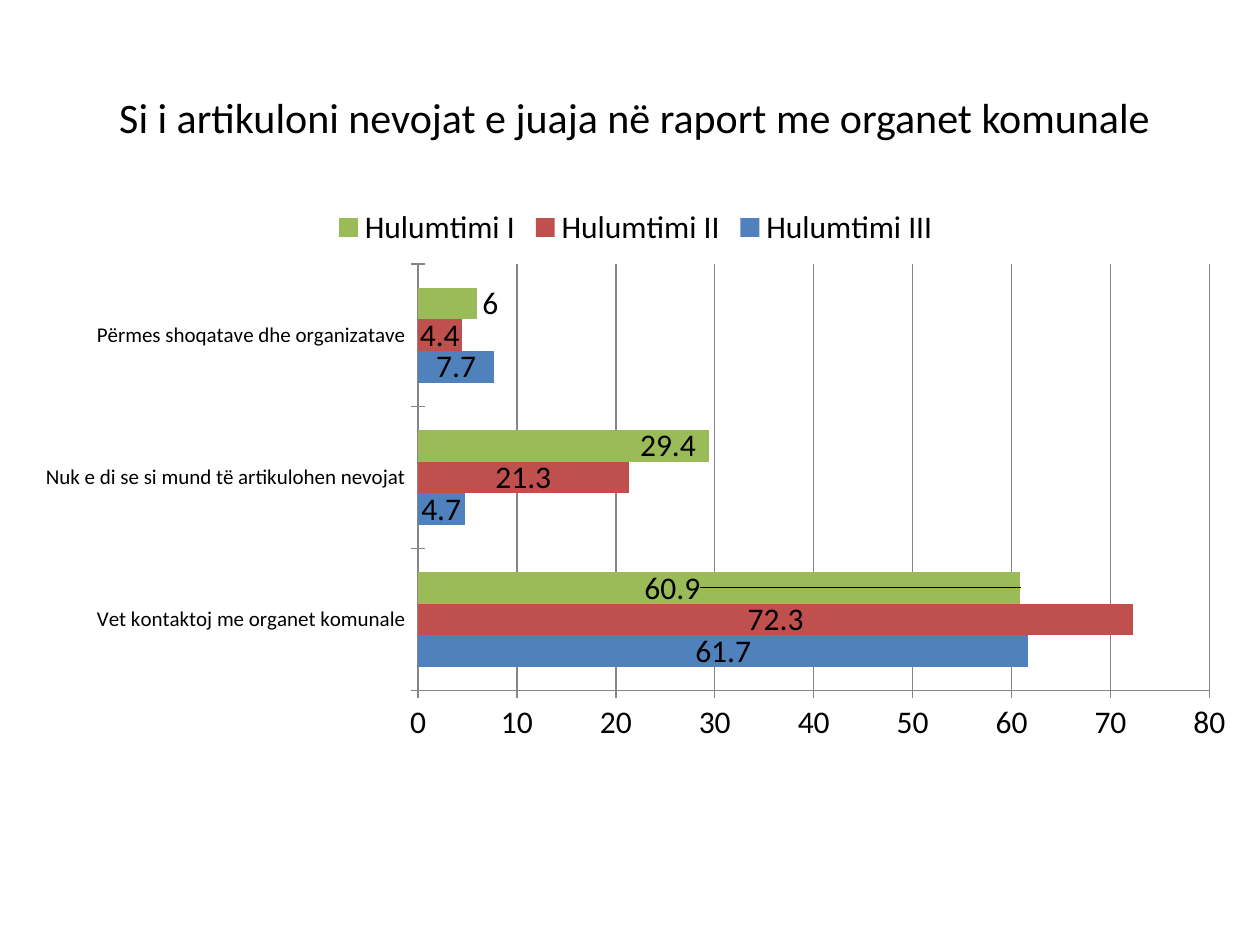
"""Build a survey slide with a title and a clustered bar chart."""
from lxml import etree
from pptx import Presentation
from pptx.chart.data import CategoryChartData
from pptx.dml.color import RGBColor
from pptx.enum.chart import XL_CHART_TYPE, XL_LABEL_POSITION, XL_LEGEND_POSITION, XL_TICK_MARK
from pptx.enum.text import MSO_ANCHOR, PP_ALIGN
from pptx.oxml.ns import qn
from pptx.util import Cm, Pt

BAR = XL_CHART_TYPE.BAR_CLUSTERED
CENTER, OUTSIDE = XL_LABEL_POSITION.CENTER, XL_LABEL_POSITION.OUTSIDE_END
TOP = XL_LEGEND_POSITION.TOP
CROSS, NO_TICK = XL_TICK_MARK.CROSS, XL_TICK_MARK.NONE
MIDDLE, ALIGN_CENTER = MSO_ANCHOR.MIDDLE, PP_ALIGN.CENTER

FONT = "Calibri"
COLORS = {"text": "000000", "line": "868686", "blue": "4F81BD", "red": "C0504D", "green": "9BBB59"}
TITLE = " Si i artikuloni nevojat e juaja në raport me organet komunale"
CATEGORIES = [
    "Vet kontaktoj me organet komunale",
    "Nuk e di se si mund të artikulohen nevojat",
    "Përmes shoqatave dhe organizatave",
]
SERIES = [
    ("Hulumtimi III", (61.7, 4.7, 7.7), "blue", CENTER),
    ("Hulumtimi II", (72.3, 21.3, 4.4), "red", CENTER),
    ("Hulumtimi I", (60.9, 29.4, 6), "green", OUTSIDE),
]
LABEL_SHIFTS = {0: -0.31, 1: -0.06}


def rgb(name):
    return RGBColor.from_string(COLORS[name])


def set_font(font, size):
    font.name = FONT
    font.size = Pt(size)
    font.color.rgb = rgb("text")


def add_title(s, text):
    tf = s.shapes.add_textbox(Cm(1.27), Cm(0.76), Cm(22.86), Cm(3.18)).text_frame
    tf.word_wrap = True
    tf.vertical_anchor = MIDDLE
    p = tf.paragraphs[0]
    p.alignment = ALIGN_CENTER
    r = p.add_run()
    r.text = text
    set_font(r.font, 24)


def style_axis(axis, size):
    axis.major_tick_mark = CROSS
    axis.minor_tick_mark = NO_TICK
    axis.format.line.color.rgb = rgb("line")
    set_font(axis.tick_labels.font, size)


def style_series(series, color, position):
    series.format.fill.solid()
    series.format.fill.fore_color.rgb = rgb(color)
    series.invert_if_negative = False
    labels = series.data_labels
    labels.show_value = True
    labels.position = position
    set_font(labels.font, 18)


def shift_label(series, index, dx):
    label = series.points[index].data_label
    label.position = OUTSIDE
    set_font(label.font, 18)
    idx = series._element.xpath(f"c:dLbls/c:dLbl/c:idx[@val='{index}']")[0]
    layout = etree.Element(qn("c:layout"))
    manual = etree.SubElement(layout, qn("c:manualLayout"))
    for tag, value in (("c:x", dx), ("c:y", 0)):
        etree.SubElement(manual, qn(tag)).set("val", str(value))
    idx.addnext(layout)


def add_bar_chart(s):
    data = CategoryChartData()
    data.categories = CATEGORIES
    for name, values, _, _ in SERIES:
        data.add_series(name, values)
    chart = s.shapes.add_chart(BAR, Cm(0.43), Cm(3.89), Cm(24.77), Cm(11.28), data).chart
    set_font(chart.font, 18)
    chart.has_title = False
    chart.has_legend = True
    chart.legend.position = TOP
    chart.legend.include_in_layout = False
    set_font(chart.legend.font, 18)
    style_axis(chart.category_axis, 12)
    style_axis(chart.value_axis, 18)
    chart.value_axis.has_major_gridlines = True
    chart.value_axis.major_gridlines.format.line.color.rgb = rgb("line")
    plot = chart.plots[0]
    plot.gap_width = 150
    plot.vary_by_categories = False
    for series, (_, _, color, position) in zip(plot.series, SERIES):
        style_series(series, color, position)
    for index, dx in LABEL_SHIFTS.items():
        shift_label(plot.series[2], index, dx)


def main():
    prs = Presentation()
    prs.slide_width, prs.slide_height = Cm(25.4), Cm(19.05)
    s = prs.slides.add_slide(prs.slide_layouts[6])
    add_title(s, TITLE)
    add_bar_chart(s)
    prs.save("out.pptx")


if __name__ == "__main__":
    main()
